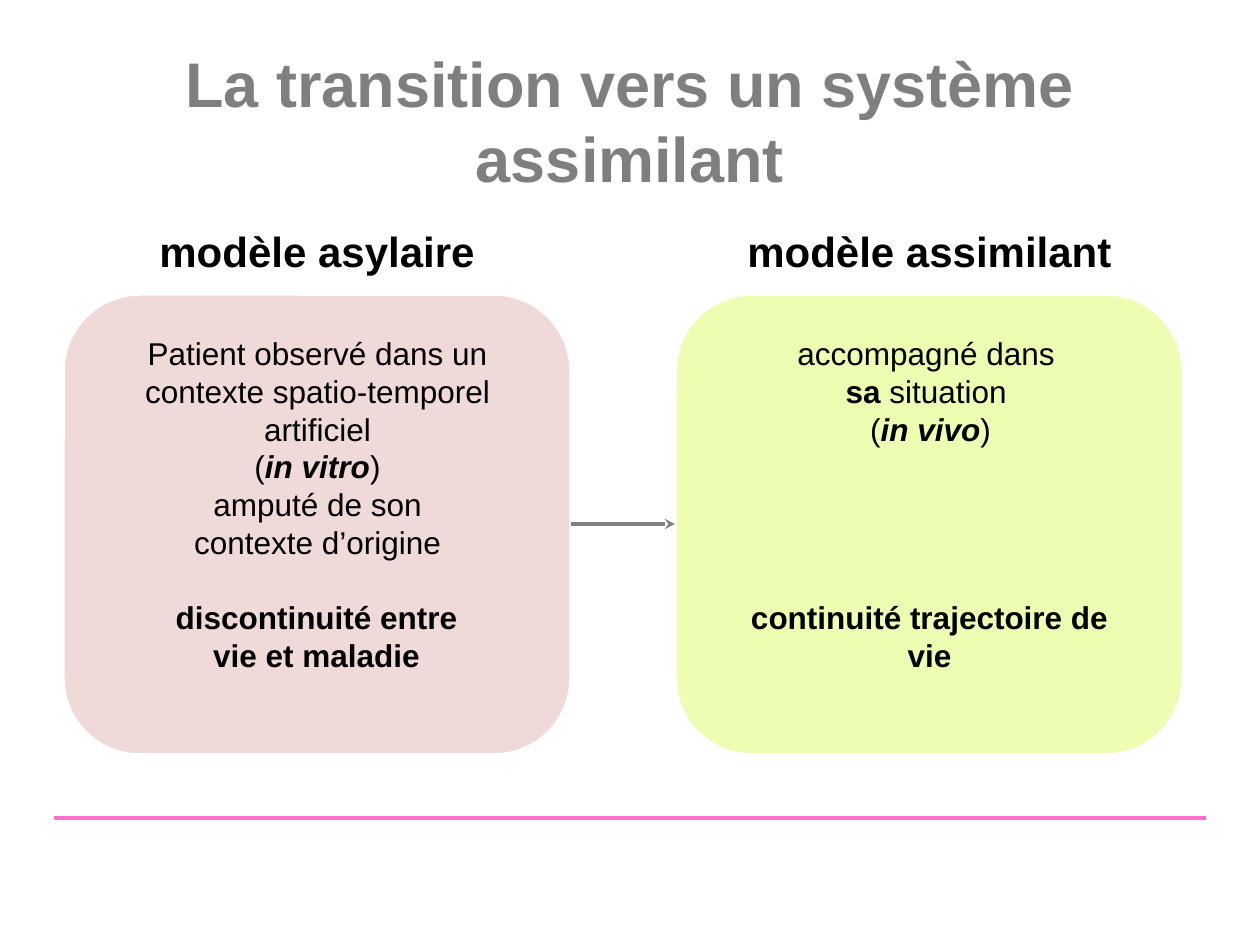
from lxml import etree
from pptx import Presentation
from pptx.dml.color import RGBColor
from pptx.enum.shapes import MSO_CONNECTOR, MSO_SHAPE
from pptx.enum.text import MSO_ANCHOR, PP_ALIGN
from pptx.oxml.ns import qn
from pptx.util import Emu, Pt

STRAIGHT = MSO_CONNECTOR.STRAIGHT
ROUNDED = MSO_SHAPE.ROUNDED_RECTANGLE
TOP = MSO_ANCHOR.TOP
CENTER = PP_ALIGN.CENTER

FONT = "Arial"
EMU_PER_PX = 914400 / 126
BOX_TOP, BOX_WIDTH, BOX_HEIGHT = 294, 508, 461
HEADING_TOP, HEADING_HEIGHT = 219, 63
BODY_TOP, BODY_WIDTH = 328, 483
CONCLUSION_TOP, CONCLUSION_HEIGHT = 592, 90


def px(value):
    return Emu(round(value * EMU_PER_PX))


def color(hex_string):
    return RGBColor.from_string(hex_string)


def write_paragraphs(text_frame, paragraphs, size, hex_color="000000"):
    """Each paragraph is a list of (text, bold, italic) runs."""
    for index, runs in enumerate(paragraphs):
        paragraph = text_frame.paragraphs[0] if index == 0 else text_frame.add_paragraph()
        paragraph.alignment = CENTER
        for text, bold, italic in runs:
            run = paragraph.add_run()
            run.text = text
            font = run.font
            font.name, font.size = FONT, Pt(size)
            font.bold, font.italic = bold, italic
            font.color.rgb = color(hex_color)


def plain(text):
    return [(text, False, False)]


def bold(text):
    return [(text, True, False)]


def set_title(slide, text):
    title = slide.shapes.title
    title.left, title.top, title.width, title.height = map(px, (63, 38, 1134, 183))
    title.text_frame.vertical_anchor = TOP
    title.text_frame.word_wrap = True
    write_paragraphs(title.text_frame, [bold(text)], 36, "7F7F7F")


def add_text(slide, bounds, paragraphs, size, inset=None, wrap=True):
    text_frame = slide.shapes.add_textbox(*map(px, bounds)).text_frame
    text_frame.word_wrap = wrap
    if inset is not None:
        text_frame.margin_left = text_frame.margin_right = px(inset)
        text_frame.margin_top = text_frame.margin_bottom = px(inset)
    write_paragraphs(text_frame, paragraphs, size)


def add_box(slide, left, fill):
    box = slide.shapes.add_shape(
        ROUNDED, px(left), px(BOX_TOP), px(BOX_WIDTH), px(BOX_HEIGHT))
    box.shadow.inherit = False
    box.fill.solid()
    box.fill.fore_color.rgb = color(fill)
    box.line.color.rgb = color("FFFFFF")
    box.line.width = Pt(2)


def add_line(slide, start, end, y, hex_color, arrow=None):
    line = slide.shapes.add_connector(STRAIGHT, px(start), px(y), px(end), px(y))
    line.line.color.rgb = color(hex_color)
    line.line.width = Pt(2)
    properties = line._element.spPr
    if arrow:
        etree.SubElement(properties.find(qn("a:ln")), qn("a:tailEnd"), type=arrow)
    etree.SubElement(properties, qn("a:effectLst"))


def add_model(slide, left, fill, heading, body, conclusion):
    """Each text part is (left, width, paragraphs) or holds a height as well."""
    add_box(slide, left, fill)
    heading_left, heading_width, heading_text = heading
    add_text(slide, (heading_left, HEADING_TOP, heading_width, HEADING_HEIGHT),
             [bold(heading_text)], 24, wrap=False)
    body_left, body_height, paragraphs = body
    add_text(slide, (body_left, BODY_TOP, BODY_WIDTH, body_height),
             paragraphs, 18, inset=6)
    conclusion_left, conclusion_width, lines = conclusion
    add_text(slide, (conclusion_left, CONCLUSION_TOP, conclusion_width, CONCLUSION_HEIGHT),
             [bold(line) for line in lines], 18, inset=6)


def main():
    presentation = Presentation()
    presentation.slide_width, presentation.slide_height = px(1260), px(945)
    slide = presentation.slides.add_slide(presentation.slide_layouts[5])

    # Footer rule and title
    add_line(slide, 54, 1206, 818, "FF6FCF")
    set_title(slide, "La transition vers un système assimilant")

    # Asylum model
    add_model(
        slide, 63, "F0D9D9",
        heading=(145, 344, "modèle asylaire"),
        body=(76, 242, [
            plain("Patient observé dans un"),
            plain("contexte spatio-temporel"),
            plain("artificiel"),
            [(" (", False, False), ("in vitro", True, True), (") ", False, False)],
            plain("amputé de son"),
            plain("contexte d’origine"),
        ]),
        conclusion=(123, 387, ["discontinuité entre", "vie et maladie"]))

    # Assimilating model
    add_model(
        slide, 675, "EDFDB2",
        heading=(733, 393, "modèle assimilant"),
        body=(689, 127, [
            plain("accompagné dans "),
            [("sa", True, False), (" situation ", False, False)],
            [("(", False, False), ("in vivo", True, True), (")", False, False)],
        ]),
        conclusion=(743, 373, ["continuité trajectoire de vie"]))

    # Transition between the models
    add_line(slide, 63 + BOX_WIDTH, 675, 524, "808080", arrow="stealth")

    presentation.save("out.pptx")


if __name__ == "__main__":
    main()
